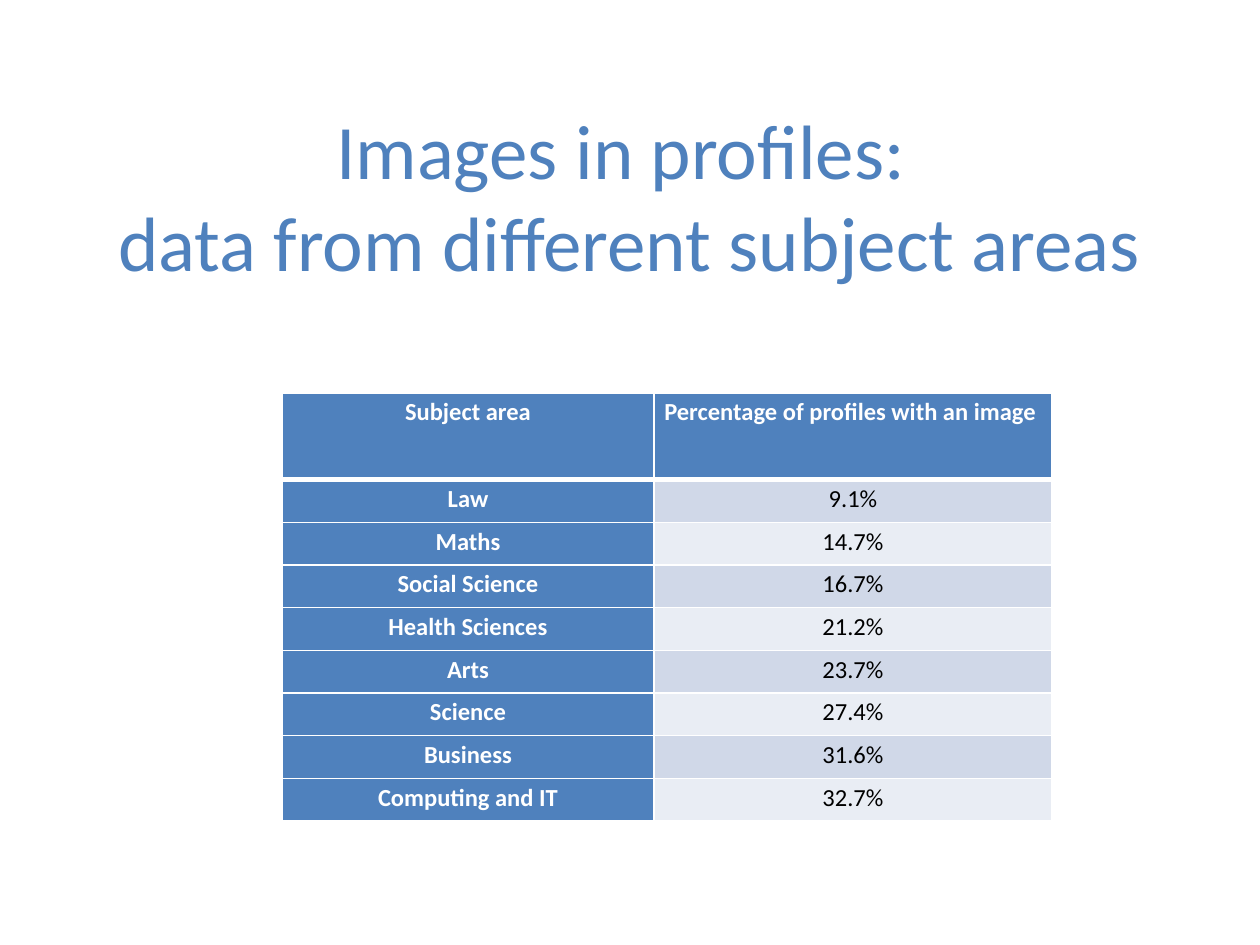
from lxml.etree import SubElement
from pptx import Presentation
from pptx.dml.color import RGBColor
from pptx.enum.text import MSO_ANCHOR, PP_ALIGN
from pptx.oxml.ns import qn
from pptx.util import Cm, Pt

COLORS = {
    "blue": "4F81BD",
    "white": "FFFFFF",
    "black": "000000",
    "dark_band": "D0D8E8",
    "light_band": "E9EDF4",
}
FONT = "Calibri"
HEADINGS = ("Subject area", "Percentage of profiles with an image ")
PROFILE_SHARES = [
    ("Law", "9.1%"),
    ("Maths", "14.7%"),
    ("Social Science", "16.7%"),
    ("Health Sciences", "21.2%"),
    ("Arts", "23.7%"),
    ("Science", "27.4%"),
    ("Business", "31.6%"),
    ("Computing and IT", "32.7%"),
]
COLUMN_WIDTHS = (7.49, 8.03)
HEADER_HEIGHT, ROW_HEIGHT = 1.75, 0.86


def rgb(name):
    return RGBColor.from_string(COLORS[name])


def format_runs(paragraph, size, color, bold=False):
    paragraph.alignment = PP_ALIGN.CENTER
    for run in paragraph.runs:
        run.font.name = FONT
        run.font.size = Pt(size)
        run.font.bold = bold
        run.font.color.rgb = rgb(color)


def add_title(slide, left, top, width, height):
    title = slide.shapes.add_textbox(Cm(left), Cm(top), Cm(width), Cm(height))
    frame = title.text_frame
    frame.word_wrap = True
    frame.vertical_anchor = MSO_ANCHOR.MIDDLE
    frame.text = "Images in profiles:\v data from different subject areas"
    format_runs(frame.paragraphs[0], 44, "blue")


def set_borders(cell, top, bottom):
    """Draw white borders, 1 pt at the sides and the given points elsewhere."""
    properties = cell._tc.get_or_add_tcPr()
    for side, points in (("L", 1), ("R", 1), ("T", top), ("B", bottom)):
        line = SubElement(properties, qn(f"a:ln{side}"), w=str(Pt(points)))
        fill = SubElement(line, qn("a:solidFill"))
        SubElement(fill, qn("a:srgbClr"), val=COLORS["white"])


def fill_cell(cell, text, row, column):
    set_borders(cell, top=3 if row == 1 else 1, bottom=3 if row == 0 else 1)
    is_heading = row == 0 or column == 0
    band = "dark_band" if row % 2 else "light_band"
    cell.fill.solid()
    cell.fill.fore_color.rgb = rgb("blue" if is_heading else band)
    cell.margin_left = cell.margin_right = Cm(0.18)
    cell.margin_top = cell.margin_bottom = 0
    cell.text_frame.text = text
    paragraph = cell.text_frame.paragraphs[0]
    paragraph.line_spacing = 1.15
    format_runs(paragraph, 14, "white" if is_heading else "black", is_heading)


def add_share_table(slide, left, top):
    rows = [HEADINGS, *PROFILE_SHARES]
    heights = [HEADER_HEIGHT] + [ROW_HEIGHT] * len(PROFILE_SHARES)
    table = slide.shapes.add_table(
        len(rows), len(HEADINGS), Cm(left), Cm(top),
        Cm(sum(COLUMN_WIDTHS)), Cm(sum(heights)),
    ).table
    for column, width in zip(table.columns, COLUMN_WIDTHS):
        column.width = Cm(width)
    for row, (texts, height) in enumerate(zip(rows, heights)):
        table.rows[row].height = Cm(height)
        for column, text in enumerate(texts):
            fill_cell(table.cell(row, column), text, row, column)


def main():
    presentation = Presentation()
    presentation.slide_width = Cm(25.4)
    presentation.slide_height = Cm(19.05)
    slide = presentation.slides.add_slide(presentation.slide_layouts[6])
    add_title(slide, 1.09, 2.34, 22.86, 3.18)
    add_share_table(slide, 5.69, 7.92)
    presentation.save("out.pptx")


if __name__ == "__main__":
    main()
